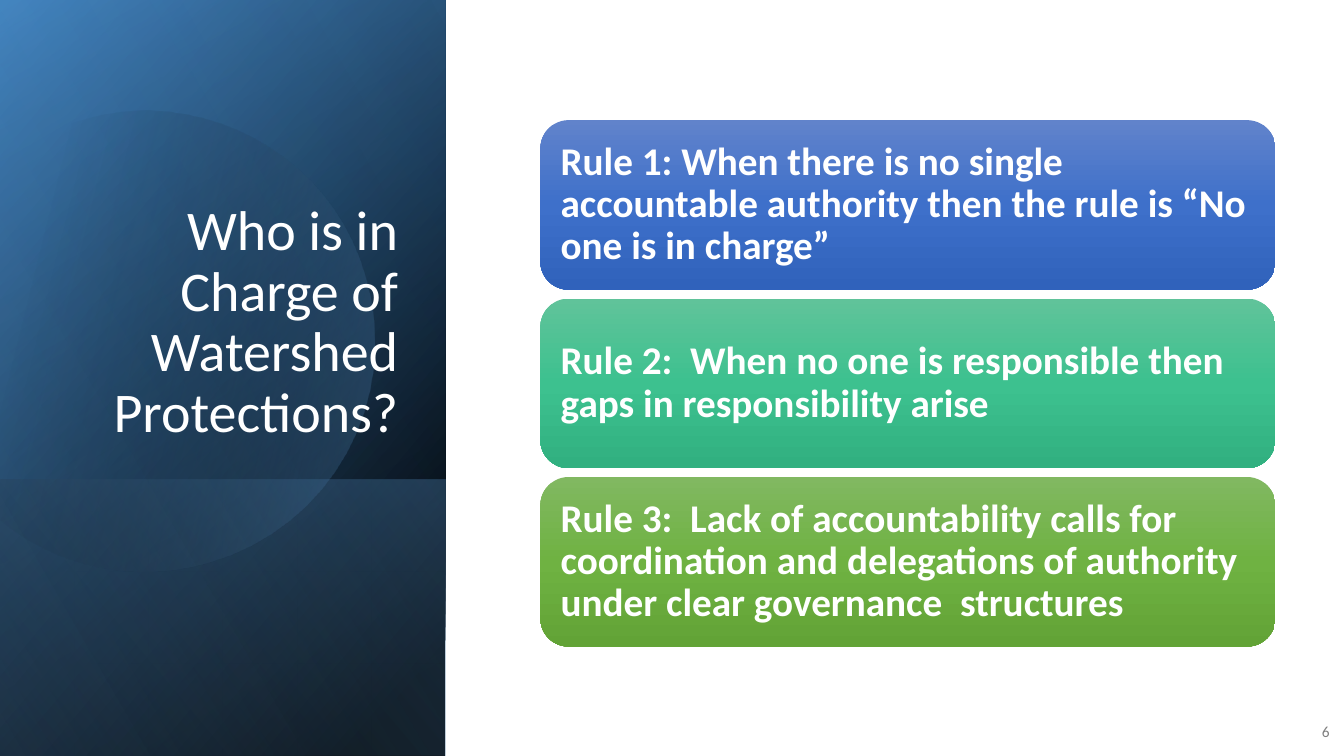
from dataclasses import dataclass
from math import cos, radians, sin

from lxml.etree import SubElement
from pptx import Presentation
from pptx.dml.color import RGBColor as RGB
from pptx.enum.shapes import MSO_SHAPE as SHAPE
from pptx.enum.text import MSO_ANCHOR as ANCHOR, MSO_AUTO_SIZE as AUTO, PP_ALIGN as ALIGN
from pptx.oxml import parse_xml
from pptx.oxml.ns import nsdecls, qn
from pptx.util import Pt


@dataclass(frozen=True)
class Theme:
    font: str = "Calibri"
    white: str = "FFFFFF"
    grey: str = "808080"
    black: str = "000000"
    blue: str = "5B9BD5"
    deep_blue: str = "2E75B6"
    pale_blue: str = "9DC3E6"
    title: int = 40
    rule: int = 28
    number: int = 11
    # Top, middle and bottom colour of each rule card
    cards: tuple = (
        ("6183CB", "3E70CA", "3062BB"),
        ("60C39A", "3DC18F", "31B080"),
        ("81B861", "6FB242", "62A336"),
    )


T = Theme()
RULES = (
    "Rule 1: When there is no single accountable authority then the rule is “No one is in charge”",
    "Rule 2:  When no one is responsible then gaps in responsibility arise",
    "Rule 3:  Lack of accountability calls for coordination and delegations of authority "
    "under clear governance  structures",
)

# Disc outline: start, then cubic curves (three points) and lines (one point)
DISC_START = (107, 79)
DISC_PARTS = (
    ((177, 81), (241, 127), (261, 198)),
    ((287, 286), (236, 377), (149, 402)),
    ((94, 418), (38, 404), (-2, 370)),
    ((-11, 362),),
    ((-11, 126),),
    ((0, 116),),
    ((17, 102), (36, 92), (58, 86)),
    ((74, 81), (91, 79), (107, 79)),
)
DISC_CENTER = (114, 241)
DISC_TURN = 343.9


def paint(sp, angle, stops):
    """Fill with a linear gradient of (position %, colour, opacity %) stops."""
    sp.shadow.inherit = False
    sp.line.fill.background()
    sp.fill.solid()
    grad = parse_xml(f'<a:gradFill {nsdecls("a")} rotWithShape="1"><a:gsLst/>'
                     f'<a:lin ang="{angle * 60000}" scaled="0"/></a:gradFill>')
    for pos, color, opacity in stops:
        gs = SubElement(grad[0], qn("a:gs"), pos=str(pos * 1000))
        clr = SubElement(gs, qn("a:srgbClr"), val=color)
        if opacity < 100:
            SubElement(clr, qn("a:alpha"), val=str(opacity * 1000))
    props = sp._element.spPr
    props.replace(props.find(qn("a:solidFill")), grad)


def write(tf, text, size, color, align, anchor, **extra):
    tf.word_wrap = True
    tf.auto_size = AUTO.NONE
    tf.vertical_anchor = anchor
    p = tf.paragraphs[0]
    p.alignment = align
    p.line_spacing = extra.pop("spacing", 1.0)
    r = p.add_run()
    r.text = text
    r.font.color.rgb = RGB.from_string(color)
    for name, value in {"name": T.font, "size": Pt(size), **extra}.items():
        setattr(r.font, name, value)


def add_layer(s, x, y, w, h, angle, stops):
    """A mirrored, quarter-turned rectangle that covers the given box."""
    sp = s.shapes.add_shape(SHAPE.RECTANGLE, Pt(x + (w - h) / 2), Pt(y + (h - w) / 2), Pt(h), Pt(w))
    sp.rotation = 90
    sp._element.spPr.xfrm.set("flipH", "1")
    paint(sp, angle, stops)


def disc_points(steps=16):
    """Outline points, turned back so that the shape's rotation restores them."""
    points = [DISC_START]
    for part in DISC_PARTS:
        if len(part) == 1:
            points.append(part[0])
            continue
        curve = (points[-1], *part)
        for i in range(1, steps + 1):
            t = i / steps
            weights = ((1 - t) ** 3, 3 * t * (1 - t) ** 2, 3 * t * t * (1 - t), t ** 3)
            points.append(tuple(sum(k * pt[axis] for k, pt in zip(weights, curve)) for axis in (0, 1)))
    a, (cx, cy) = radians(-DISC_TURN), DISC_CENTER
    return [(cx + (x - cx) * cos(a) - (y - cy) * sin(a),
             cy + (x - cx) * sin(a) + (y - cy) * cos(a)) for x, y in points]


def add_disc(s, x, y):
    outline = [(Pt(x + px), Pt(y + py)) for px, py in disc_points()]
    builder = s.shapes.build_freeform(*outline[0])
    builder.add_line_segments(outline[1:], close=True)
    sp = builder.convert_to_shape()
    sp.rotation = DISC_TURN
    paint(sp, 30, ((29, T.black, 0), (100, T.blue, 43)))


def add_panel(s, x, y, w, h):
    # Background layers and disc
    foot = 197.3
    add_layer(s, x, y, w, h, 50, ((8, T.black, 100), (100, T.deep_blue, 100)))
    add_layer(s, x, y, w, h, 30, ((0, T.black, 0), (99, T.blue, 46)))
    add_layer(s, x, y + h - foot, w, foot, 130, ((2, T.blue, 29), (100, T.black, 30)))
    add_disc(s, x, y)
    add_layer(s, x, y, w, h, 120, ((0, T.black, 0), (99, T.pale_blue, 11)))

    # Title, brought in front of the layers
    title = s.shapes.title
    box = {"left": x + 46, "top": y + 132.5, "width": 245.5, "height": 188.6}
    for name, value in box.items():
        setattr(title, name, Pt(value))
    write(title.text_frame, "Who is in Charge of Watershed Protections?", T.title, T.white,
          ALIGN.RIGHT, ANCHOR.BOTTOM, spacing=0.9)
    title._element.getparent().append(title._element)


def add_rules(s, x, y, w, h, gap=6.4):
    card_h = (h - gap * (len(RULES) - 1)) / len(RULES)
    for i, (text, colors) in enumerate(zip(RULES, T.cards)):
        sp = s.shapes.add_shape(SHAPE.ROUNDED_RECTANGLE, Pt(x), Pt(y + i * (card_h + gap)),
                                Pt(w), Pt(card_h))
        paint(sp, 90, [(pos, color, 100) for pos, color in zip((0, 50, 100), colors)])
        tf = sp.text_frame
        for side in ("left", "top", "right", "bottom"):
            setattr(tf, f"margin_{side}", Pt(8.6))
        write(tf, text, T.rule, T.white, ALIGN.LEFT, ANCHOR.MIDDLE, spacing=0.9, bold=True)


def add_number(s, x, y, w, h):
    box = s.shapes.add_textbox(Pt(x), Pt(y), Pt(w), Pt(h))
    write(box.text_frame, "6", T.number, T.grey, ALIGN.RIGHT, ANCHOR.MIDDLE)


def main():
    prs = Presentation()
    prs.slide_width, prs.slide_height = Pt(960), Pt(540)
    s = prs.slides.add_slide(prs.slide_layouts[5])
    add_panel(s, 0, 0, 318.2, 540)
    add_rules(s, 386, 85.8, 525, 376)
    add_number(s, 921.6, 508.3, 35.3, 28.8)
    prs.save("out.pptx")


if __name__ == "__main__":
    main()
